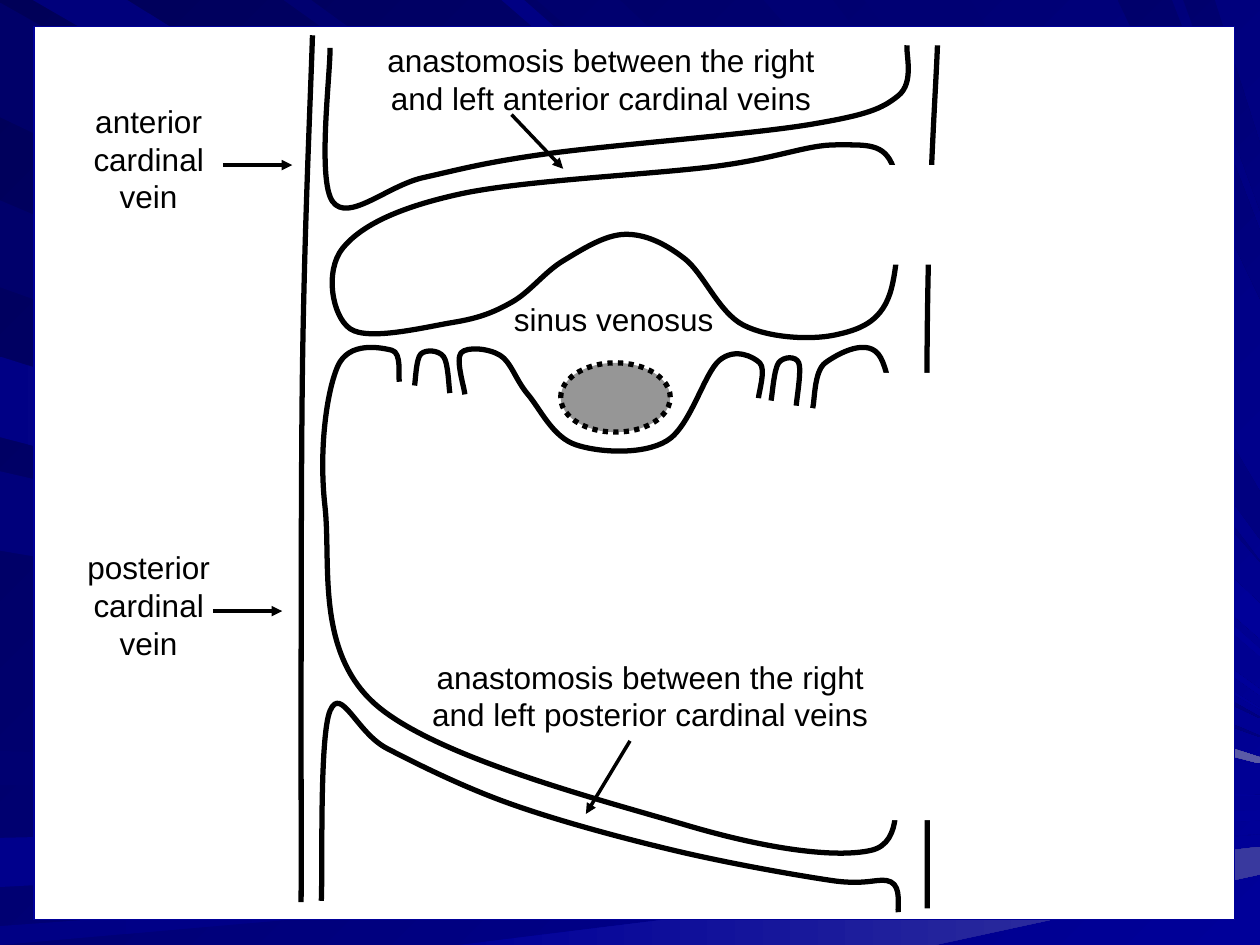
import pptx
import pptx.util
import pptx.dml.color
import pptx.enum.dml
import pptx.enum.shapes
import pptx.enum.text
import pptx.oxml
import pptx.oxml.ns
from pptx.util import Inches


def paint(fill, colours, angle=0):
    if len(colours) == 1:
        fill.solid()
        fill.fore_color.rgb = pptx.dml.color.RGBColor.from_string(colours[0])
        return
    fill.gradient()
    fill.gradient_angle = (360 - angle) % 360
    for stop, colour in zip(fill.gradient_stops, colours):
        stop.color.rgb = pptx.dml.color.RGBColor.from_string(colour)


def outline(points, closed):
    corners = [(Inches(x), Inches(y)) for x, y in points]
    builder = slide.shapes.build_freeform(*corners[0], scale=1.0)
    builder.add_line_segments(corners[1:], close=closed)
    shape = builder.convert_to_shape()
    shape.shadow.inherit = False
    return shape


deck = pptx.Presentation()
deck.slide_width, deck.slide_height = Inches(10), Inches(7.5)
slide = deck.slides.add_slide(deck.slide_layouts[6])
paint(slide.background.fill, ["000058", "000099"], 45)

rays = [
    ("left", "000069", "000080", 0.02, 0.93, 5.7, 5.69),
    ("top", "00007B", "000099", 1.01, 0.26, 5.63, 5.62),
    ("left", "000071", "000099", 5.96, 6.23, 6.32, 6.31),
    ("left", "00008C", "000099", 6.65, 7.04, 6.51, 6.43),
    ("left", "000085", "000099", 7.35, 7.5, 6.62, 6.62),
    ("bottom", "000099", "39399E", 3.64, 7.42, 6.94, 6.72),
    ("left", "00006B", "000080", 1.59, 2.28, 5.85, 5.84),
    ("top", "000083", "000099", 4.16, 3.98, 5.21, 5.15),
    ("top", "00006D", "000099", 4.92, 4.26, 5.07, 4.79),
    ("top", "000073", "000080", 6.61, 6.06, 4.46, 4.45),
    ("top", "00006B", "000080", 9.3, 8.87, 2.37, 1.83),
    ("top", "00006D", "000080", 9.64, 9.39, 1.67, 1.14),
    ("left", "00007B", "000099", 3.74, 4.37, 6.06, 6.05),
    ("top", "000070", "000099", 2.47, 2.25, 5.52, 5.47),
    ("top", "000073", "000080", 7.7, 6.86, 4.28, 3.9),
    ("left", "000085", "5A5AA6", 2.83, 3.47, 6.06, 6.01),
]
for edge, dark, light, start, end, low, high in rays:
    base = {"left": [(0, start), (0, end)], "top": [(start, 0), (end, 0)],
            "bottom": [(start, 7.5), (end, 7.5)]}[edge]
    ray = outline(base + [(10, low), (10, high)], True)
    paint(ray.fill, [dark, light], 45 if edge == "top" else 0)
    ray.line.fill.background()

panel = slide.shapes.add_shape(pptx.enum.shapes.MSO_SHAPE.RECTANGLE,
                               Inches(0.27), Inches(0.21), Inches(9.53), Inches(7.09))
panel.shadow.inherit = False
paint(panel.fill, ["FFFFFF"])
paint(panel.line.fill, ["000099"])
panel.line.width = pptx.util.Pt(0.75)

vessel_walls = [
    [(6.64, 1.15), (5.68, 1.32), (3.65, 1.54), (2.72, 1.97), (2.78, 2.61), (3.59, 2.56), (4.06, 2.4),
     (4.47, 2.07), (4.96, 1.86), (5.43, 2.05), (5.9, 2.58), (6.62, 2.66), (7.06, 2.34), (7.09, 1.33),
     (6.64, 1.15)],
    [(7.12, 6.19), (6.91, 6.75), (5.45, 6.55), (2.98, 5.59), (2.58, 4.02), (2.68, 2.91), (3.11, 2.78),
     (3.17, 3.03)],
    [(3.29, 3.06), (3.34, 2.81), (3.52, 2.83), (3.57, 3.12)],
    [(3.69, 3.13), (3.66, 2.8), (3.97, 2.82), (4.19, 3.13), (4.57, 3.53), (5.29, 3.5), (5.71, 2.86),
     (6.03, 2.88), (6.02, 3.16)],
    [(6.12, 3.18), (6.18, 2.88), (6.34, 2.88), (6.32, 3.22)],
    [(6.45, 3.24), (6.55, 2.88), (6.99, 2.84), (7.11, 3.94), (7.12, 6.26)],
    [(2.48, 0.28), (2.4, 2.96), (2.39, 7.16)],
    [(7.44, 0.36), (7.36, 2.57), (7.36, 7.21)],
    [(2.62, 0.38), (2.64, 1.6), (3.36, 1.41), (4.35, 1.22), (6.42, 0.99), (7.13, 0.76), (7.2, 0.36)],
    [(2.55, 7.15), (2.62, 5.64), (3.07, 5.94), (4.05, 6.38), (5.35, 6.75), (6.61, 6.99), (7.07, 7),
     (7.13, 7.24)],
]
for knots in vessel_walls:
    closed = knots[0] == knots[-1]
    before = knots[-2] if closed else knots[0]
    after = knots[1] if closed else knots[-1]
    padded = [before, *knots, after]
    points = [knots[0]]
    for a, b, c, d in zip(padded, padded[1:], padded[2:], padded[3:]):
        points.append((b[0] + (c[0] - a[0]) / 6, b[1] + (c[1] - a[1]) / 6))
        points.append((c[0] - (d[0] - b[0]) / 6, c[1] - (d[1] - b[1]) / 6))
        points.append(c)
    wall = outline(points, closed)
    wall.fill.background()
    paint(wall.line.fill, ["000000"])
    wall.line.width = pptx.util.Pt(3)
    steps = list(wall._element.iter(pptx.oxml.ns.qn("a:lnTo")))
    for start in range(0, len(steps) - 2, 3):
        bend = pptx.oxml.parse_xml(f'<a:cubicBezTo {pptx.oxml.ns.nsdecls("a")}/>')
        steps[start].addprevious(bend)
        for step in steps[start:start + 3]:
            bend.append(step[0])
            step.getparent().remove(step)

opening = slide.shapes.add_shape(pptx.enum.shapes.MSO_SHAPE.OVAL,
                                 Inches(4.45), Inches(2.88), Inches(0.87), Inches(0.55))
opening.shadow.inherit = False
paint(opening.fill, ["969696"])
paint(opening.line.fill, ["000000"])
opening.line.width = pptx.util.Pt(3)
opening.line.dash_style = pptx.enum.dml.MSO_LINE.ROUND_DOT

for left, top, width, height in [(6.89, 2.96, 0.71, 3.55), (6.97, 1.31, 0.71, 0.79)]:
    gap = slide.shapes.add_shape(pptx.enum.shapes.MSO_SHAPE.RECTANGLE,
                                 Inches(left), Inches(top), Inches(width), Inches(height))
    gap.shadow.inherit = False
    paint(gap.fill, ["FFFFFF"])
    gap.line.fill.background()

labels = [
    ("sinus venosus", 3.98, 2.33, 1.89, 0.4, "LEFT"),
    ("anastomosis between the right and left anterior cardinal veins", 2.8, 0.28, 3.94, 0.7, "CENTER"),
    ("anastomosis between the right and left posterior cardinal veins", 3.19, 5.17, 3.94, 0.7, "CENTER"),
    ("anterior cardinal vein", 0.51, 0.76, 1.34, 1, "CENTER"),
    ("posterior cardinal vein", 0.51, 4.3, 1.34, 1, "CENTER"),
]
for wording, left, top, width, height, side in labels:
    label = slide.shapes.add_textbox(Inches(left), Inches(top), Inches(width), Inches(height))
    label.text_frame.word_wrap = True
    label.text_frame.auto_size = pptx.enum.text.MSO_AUTO_SIZE.SHAPE_TO_FIT_TEXT
    label.text_frame.text = wording
    paragraph = label.text_frame.paragraphs[0]
    paragraph.alignment = pptx.enum.text.PP_ALIGN[side]
    font = paragraph.runs[0].font
    font.name, font.size = "Arial", pptx.util.Pt(18)
    paint(font.fill, ["000000"])

for pointer in [(4.06, 0.91, 4.47, 1.34), (5, 5.88, 4.65, 6.46), (1.77, 1.31, 2.32, 1.31), (1.69, 4.85, 2.24, 4.85)]:
    arrow = slide.shapes.add_connector(pptx.enum.shapes.MSO_CONNECTOR.STRAIGHT, *map(Inches, pointer))
    paint(arrow.line.fill, ["000000"])
    arrow.line.width = pptx.util.Pt(2)
    properties = arrow._element.spPr
    properties.find(pptx.oxml.ns.qn("a:ln")).append(
        pptx.oxml.parse_xml(f'<a:tailEnd {pptx.oxml.ns.nsdecls("a")} type="triangle"/>'))
    properties.append(pptx.oxml.parse_xml(f'<a:effectLst {pptx.oxml.ns.nsdecls("a")}/>'))

deck.save("out.pptx")
